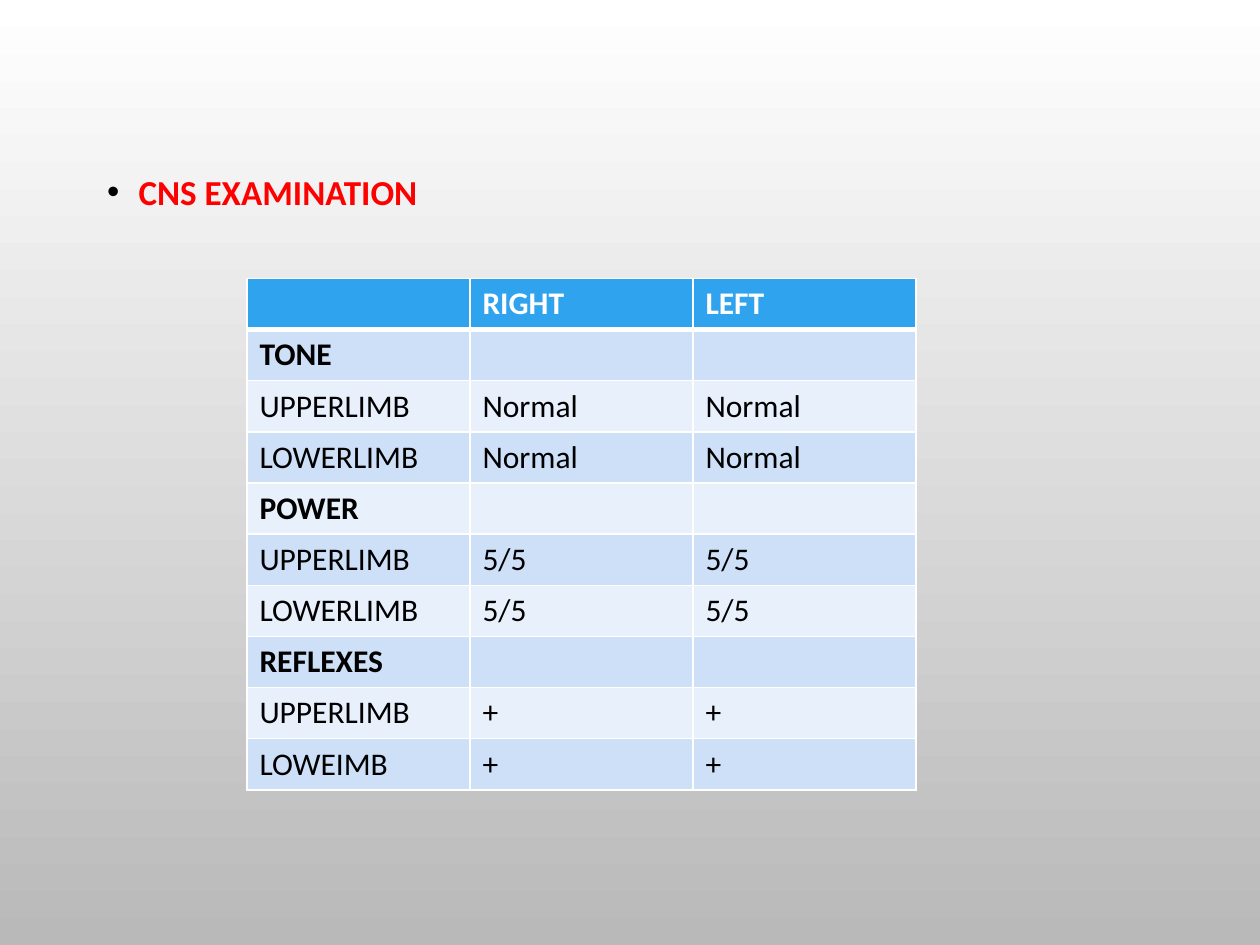
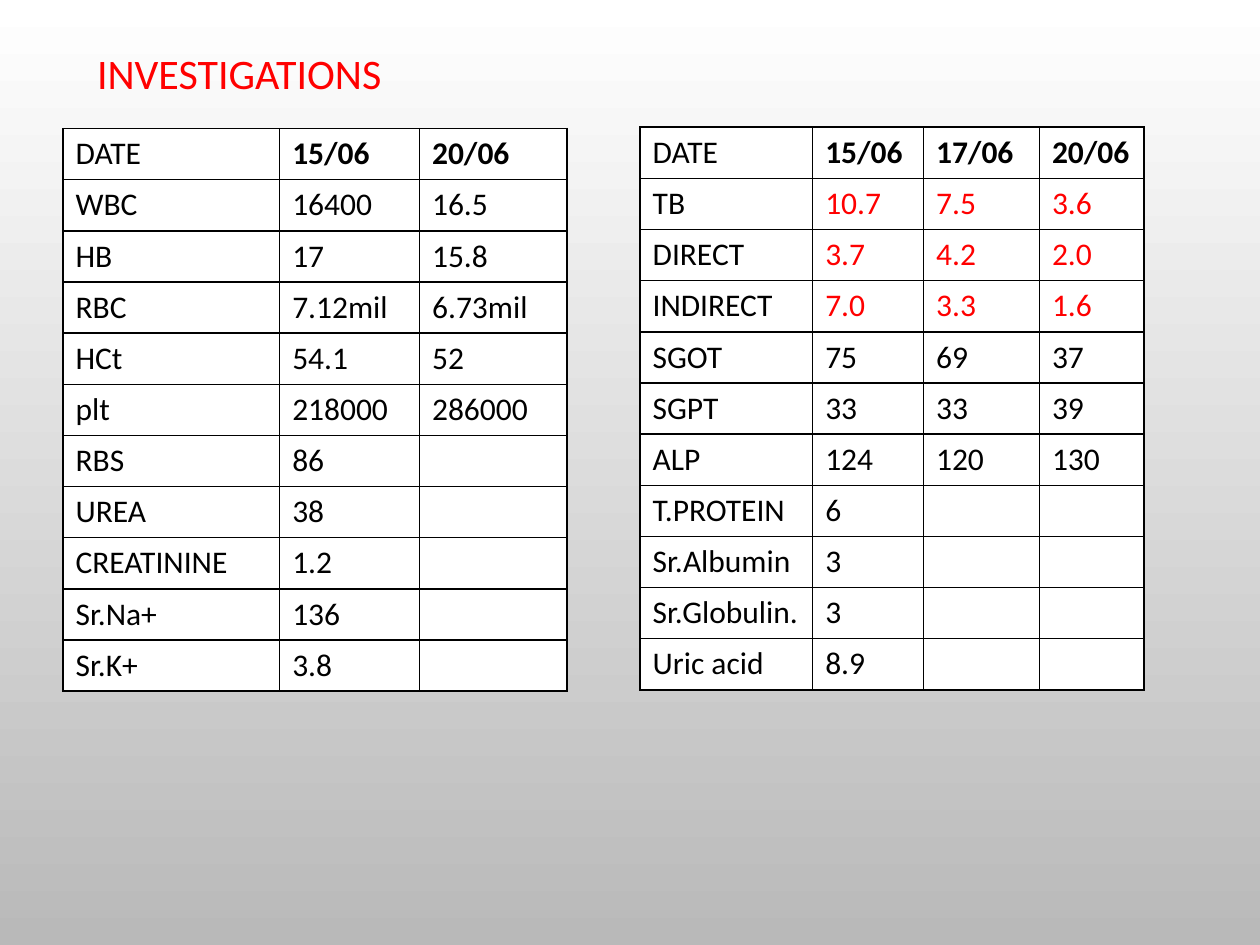
"""Build two clinical slides: a CNS examination table and laboratory investigations."""
from dataclasses import dataclass

from lxml import etree
from pptx import Presentation
from pptx.dml.color import RGBColor
from pptx.enum.text import MSO_ANCHOR, PP_ALIGN
from pptx.oxml.ns import qn
from pptx.util import Inches, Pt


@dataclass(frozen=True)
class Theme:
    font: str = "Calibri"
    title_size: int = 24
    heading_size: int = 20
    cell_size: int = 18
    red: str = "FF0000"
    black: str = "000000"
    white: str = "FFFFFF"
    backdrop_end: str = "B9B9B9"
    header_blue: str = "2FA3EE"
    band_dark: str = "CDE0F8"
    band_light: str = "E8F0FC"
    row_height: float = 0.406


theme = Theme()


def add_run(paragraph, text, size, color, bold=False):
    run = paragraph.add_run()
    run.text = text
    run.font.name = theme.font
    run.font.size = Pt(size)
    run.font.bold = bold
    run.font.color.rgb = RGBColor.from_string(color)


def add_grid(slide, left, top, widths, rows, border, header_line, look):
    frame = slide.shapes.add_table(
        len(rows), len(widths), Inches(left), Inches(top),
        Inches(sum(widths)), Inches(theme.row_height * len(rows)))
    grid = frame.table
    grid.first_row = grid.horz_banding = False
    for column, width in zip(grid.columns, widths):
        column.width = Inches(width)
    for r, values in enumerate(rows):
        grid.rows[r].height = Inches(theme.row_height)
        for c, value in enumerate(values):
            fill, color, bold = look(r, c)
            cell = grid.cell(r, c)
            if value:
                add_run(cell.text_frame.paragraphs[0], value, theme.cell_size, color, bold)
            properties = cell._tc.get_or_add_tcPr()
            for side in ("lnL", "lnR", "lnT", "lnB"):
                under_header = (r, side) in ((0, "lnB"), (1, "lnT"))
                weight = header_line if under_header else 1
                line = etree.SubElement(properties, qn(f"a:{side}"), w=str(Pt(weight)))
                solid = etree.SubElement(line, qn("a:solidFill"))
                etree.SubElement(solid, qn("a:srgbClr"), val=border)
            cell.fill.solid()
            cell.fill.fore_color.rgb = RGBColor.from_string(fill)


prs = Presentation()
prs.slide_width, prs.slide_height = Inches(10), Inches(7.5)

backdrop = prs.slide_master.background.fill
backdrop.gradient()
backdrop.gradient_angle = 270
for stop, position, color in zip(
        backdrop.gradient_stops, (0, 1), (theme.white, theme.backdrop_end)):
    stop.position = position
    stop.color.rgb = RGBColor.from_string(color)

examination = prs.slides.add_slide(prs.slide_layouts[1])
unused_title = examination.shapes.title.element
unused_title.getparent().remove(unused_title)
heading = examination.placeholders[1]
heading.left, heading.top = Inches(0.75), Inches(1.24)
heading.width, heading.height = Inches(8.5), Inches(5.1)
heading_line = heading.text_frame.paragraphs[0]
bullet = heading_line._p.get_or_add_pPr()
bullet.set("marL", str(Inches(0.25)))
bullet.set("indent", str(-Inches(0.25)))
bullet_color = etree.SubElement(bullet, qn("a:buClr"))
etree.SubElement(bullet_color, qn("a:srgbClr"), val=theme.black)
etree.SubElement(bullet, qn("a:buFont"), typeface="Arial")
etree.SubElement(bullet, qn("a:buChar"), char="•")
heading_line.line_spacing = 1.2
heading_line.space_before = Pt(0)
add_run(heading_line, "CNS EXAMINATION", theme.heading_size, theme.red, True)

cns_findings = [
    ("", "RIGHT", "LEFT"),
    ("TONE", "", ""),
    ("UPPERLIMB", "Normal", "Normal"),
    ("LOWERLIMB", "Normal", "Normal"),
    ("POWER", "", ""),
    ("UPPERLIMB", "5/5", "5/5"),
    ("LOWERLIMB", "5/5", "5/5"),
    ("REFLEXES", "", ""),
    ("UPPERLIMB", "+", "+"),
    ("LOWEIMB", "+", "+"),
]
bands = (theme.band_light, theme.band_dark)
add_grid(
    examination, 1.96, 2.21, [1.77] * 3, cns_findings, theme.white, 3,
    lambda r, c: (bands[r % 2], theme.black, r % 3 == 1) if r
    else (theme.header_blue, theme.white, True))

investigations = prs.slides.add_slide(prs.slide_layouts[5])
title = investigations.shapes.title
title.left, title.top = Inches(0.67), Inches(0.33)
title.width, title.height = Inches(2.64), Inches(0.5)
title.text_frame.vertical_anchor = MSO_ANCHOR.TOP
title_line = title.text_frame.paragraphs[0]
title_line.alignment = PP_ALIGN.LEFT
add_run(title_line, "INVESTIGATIONS", theme.title_size, theme.red)

blood_count = [
    ("DATE", "15/06", "20/06"),
    ("WBC", "16400", "16.5"),
    ("HB", "17", "15.8"),
    ("RBC", "7.12mil", "6.73mil"),
    ("HCt", "54.1", "52"),
    ("plt", "218000", "286000"),
    ("RBS", "86", ""),
    ("UREA", "38", ""),
    ("CREATININE", "1.2", ""),
    ("Sr.Na+", "136", ""),
    ("Sr.K+", "3.8", ""),
]
liver_function = [
    ("DATE", "15/06", "17/06", "20/06"),
    ("TB", "10.7", "7.5", "3.6"),
    ("DIRECT", "3.7", "4.2", "2.0"),
    ("INDIRECT", "7.0", "3.3", "1.6"),
    ("SGOT", "75", "69", "37"),
    ("SGPT", "33", "33", "39"),
    ("ALP", "124", "120", "130"),
    ("T.PROTEIN", "6", "", ""),
    ("Sr.Albumin", "3", "", ""),
    ("Sr.Globulin.", "3", "", ""),
    ("Uric acid", "8.9", "", ""),
]
lab_panels = [
    (0.5, 1.02, (1.72, 1.11, 1.17), blood_count, ()),
    (5.08, 1.01, (1.37, 0.88, 0.92, 0.83), liver_function, ("TB", "DIRECT", "INDIRECT")),
]
for left, top, widths, results, abnormal in lab_panels:
    add_grid(
        investigations, left, top, widths, results, theme.black, 1,
        lambda r, c: (
            theme.white,
            theme.red if c and results[r][0] in abnormal else theme.black,
            r == 0 and c > 0))

prs.save("out.pptx")
